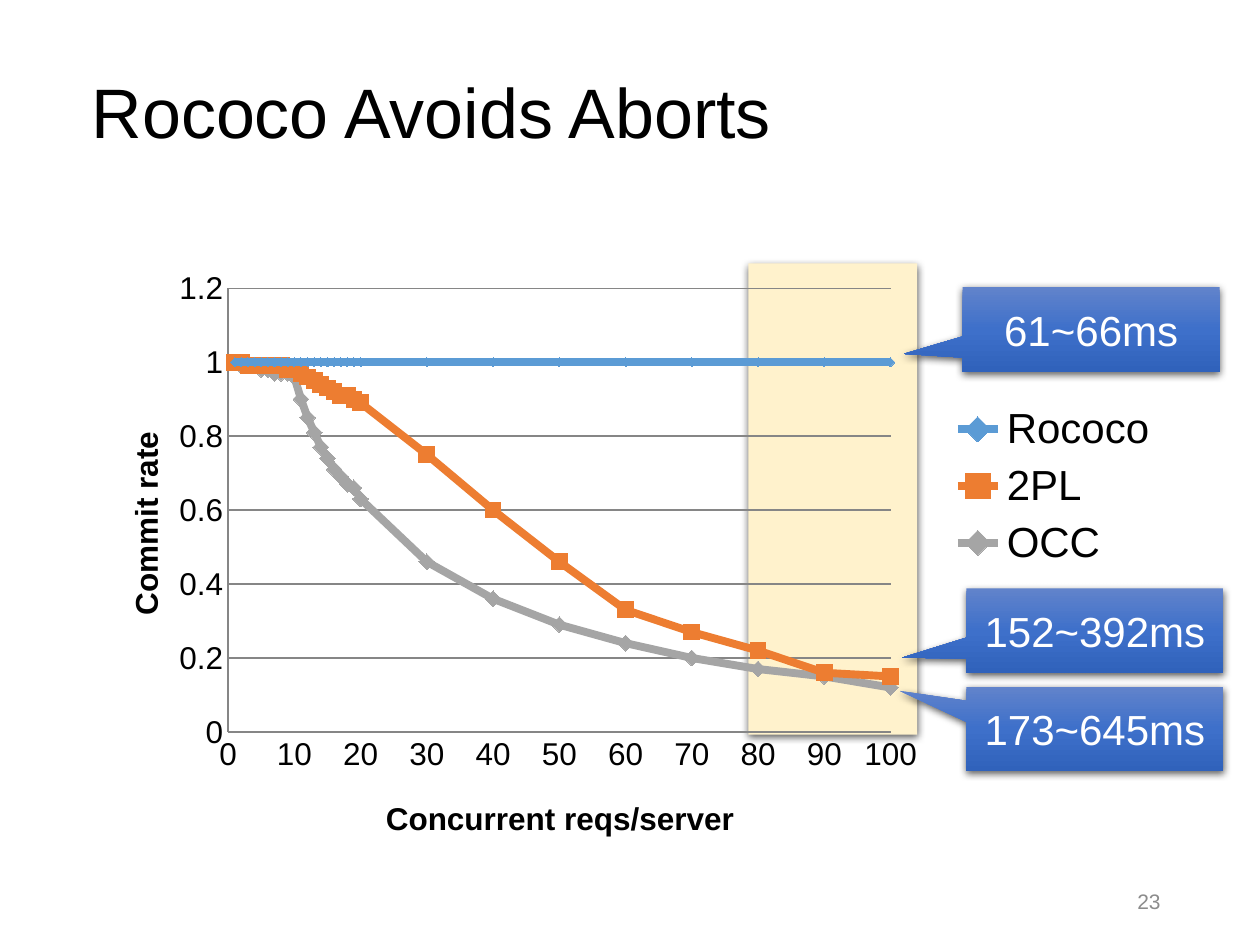
from copy import deepcopy
from dataclasses import dataclass

from lxml import etree
from pptx import Presentation
from pptx.chart.data import XyChartData
from pptx.dml.color import RGBColor
from pptx.enum.chart import XL_CHART_TYPE, XL_LEGEND_POSITION, XL_MARKER_STYLE, XL_TICK_MARK
from pptx.enum.shapes import MSO_SHAPE
from pptx.enum.text import MSO_ANCHOR, PP_ALIGN
from pptx.oxml import parse_xml
from pptx.oxml.ns import nsdecls, qn
from pptx.util import Inches, Pt

RECT, CALLOUT = MSO_SHAPE.RECTANGLE, MSO_SHAPE.RECTANGULAR_CALLOUT
LEFT, CENTER, RIGHT = PP_ALIGN.LEFT, PP_ALIGN.CENTER, PP_ALIGN.RIGHT
MIDDLE = MSO_ANCHOR.MIDDLE
DIAMOND, SQUARE = XL_MARKER_STYLE.DIAMOND, XL_MARKER_STYLE.SQUARE
NO_TICKS = XL_TICK_MARK.NONE


@dataclass(frozen=True)
class Theme:
    font: str = "Arial"
    text: str = "000000"
    inverse: str = "FFFFFF"
    muted: str = "8C8C8C"
    grid: str = "868686"
    highlight: str = "FFF2CC"
    gradient: tuple = ((0, "6183CB"), (0.5, "3E70CA"), (1, "3062BB"))
    title_size: int = 40
    large_size: int = 24
    chart_size: int = 18
    small_size: int = 12


REQUESTS = [*range(1, 21), *range(30, 101, 10)]
# name, colour, marker, marker size, commit rates
SERIES = [
    ("Rococo", "5B9BD5", DIAMOND, 5, [1] * len(REQUESTS)),
    ("2PL", "ED7D31", SQUARE, 9,
     [1, 1, 0.99, 0.99, 0.99, 0.99, 0.99, 0.99, 0.98, 0.98,
      0.97, 0.96, 0.95, 0.94, 0.93, 0.92, 0.91, 0.91, 0.9, 0.89,
      0.75, 0.6, 0.46, 0.33, 0.27, 0.22, 0.16, 0.15]),
    ("OCC", "A5A5A5", DIAMOND, 9,
     [1, 0.99, 0.99, 0.99, 0.98, 0.98, 0.97, 0.97, 0.97, 0.96,
      0.9, 0.85, 0.81, 0.77, 0.74, 0.71, 0.69, 0.67, 0.66, 0.63,
      0.46, 0.36, 0.29, 0.24, 0.2, 0.17, 0.15, 0.12]),
]
# text, left, top, pointer offset
LATENCIES = [
    ("173~645ms", 7.67, 5.45, (-0.76, -0.45)),
    ("152~392ms", 7.67, 4.67, (-0.75, 0.32)),
    ("61~66ms", 7.64, 2.28, (-0.73, 0.29)),
]


def rgb(value):
    return RGBColor.from_string(value)


def write(tf, text, *, size, color, font, bold=False, align=LEFT, spacing=None):
    p = tf.paragraphs[0]
    p.alignment = align
    if spacing:
        p.line_spacing = spacing
    r = p.add_run()
    r.text = text
    r.font.name, r.font.size, r.font.bold = font, Pt(size), bold
    r.font.color.rgb = rgb(color)


def add_shadow(sp):
    sp.shadow.inherit = False
    effects = sp._element.spPr.find(qn("a:effectLst"))
    effects.append(parse_xml(
        f'<a:outerShdw {nsdecls("a")} blurRad="{Pt(4.5)}" dist="{Pt(1.5)}" dir="5400000" '
        'rotWithShape="0"><a:srgbClr val="000000"><a:alpha val="63000"/></a:srgbClr></a:outerShdw>'))


def set_layout(parent, after=None, inner=False, **fractions):
    """Place a chart part by fractions (x, y, w, h) of the chart's frame."""
    for old in parent.findall(qn("c:layout")):
        parent.remove(old)
    layout = etree.Element(qn("c:layout"))
    manual = etree.SubElement(layout, qn("c:manualLayout"))
    if inner:
        etree.SubElement(manual, qn("c:layoutTarget"), val="inner")
    for key in "xy":
        etree.SubElement(manual, qn(f"c:{key}Mode"), val="edge")
    for key, value in fractions.items():
        etree.SubElement(manual, qn(f"c:{key}"), val=str(value))
    if after:
        parent.find(qn(after)).addnext(layout)
    else:
        parent.insert(0, layout)


class SlideBuilder:
    def __init__(self, slide, theme):
        self.s, self.theme = slide, theme

    def text(self, box, text, size, color, **fmt):
        tf = self.s.shapes.add_textbox(*map(Inches, box)).text_frame
        tf.word_wrap, tf.vertical_anchor = True, MIDDLE
        write(tf, text, size=size, color=color, font=self.theme.font, **fmt)

    def shape(self, kind, box):
        sp = self.s.shapes.add_shape(kind, *map(Inches, box))
        sp.line.fill.background()
        add_shadow(sp)
        return sp

    def highlight(self, box):
        sp = self.shape(RECT, box)
        sp.fill.solid()
        sp.fill.fore_color.rgb = rgb(self.theme.highlight)

    def callout(self, box, text, pointer):
        sp = self.shape(CALLOUT, box)
        for i, offset in enumerate(pointer):
            sp.adjustments[i] = offset
        sp.fill.gradient()
        sp.fill.gradient_angle = 270
        stops = sp._element.spPr.find(".//" + qn("a:gsLst"))
        stops.append(deepcopy(stops[-1]))
        for stop, (position, color) in zip(sp.fill.gradient_stops, self.theme.gradient):
            stop.position, stop.color.rgb = position, rgb(color)
        tf = sp.text_frame
        tf.word_wrap, tf.vertical_anchor = True, MIDDLE
        write(tf, text, size=self.theme.large_size, color=self.theme.inverse,
              font=self.theme.font, align=CENTER)

    def axis(self, axis, title, maximum, step, **place):
        th = self.theme
        axis.minimum_scale, axis.maximum_scale, axis.major_unit = 0, maximum, step
        axis.major_tick_mark = axis.minor_tick_mark = NO_TICKS
        axis.format.line.color.rgb = rgb(th.grid)
        axis.format.line.width = Pt(0.75)
        axis.tick_labels.number_format = "General"
        axis.tick_labels.number_format_is_linked = False
        write(axis.axis_title.text_frame, title, size=th.chart_size, color=th.text,
              font=th.font, bold=True, align=CENTER)
        set_layout(axis.axis_title._element, after="c:tx", **place)

    def chart(self, box):
        th = self.theme
        data = XyChartData()
        for name, *_, rates in SERIES:
            series = data.add_series(name)
            for x, y in zip(REQUESTS, rates):
                series.add_data_point(x, y)
        chart = self.s.shapes.add_chart(
            XL_CHART_TYPE.XY_SCATTER_LINES, *map(Inches, box), data).chart
        chart.has_title = False
        chart.font.name, chart.font.size = th.font, Pt(th.chart_size)
        chart.font.color.rgb = rgb(th.text)
        plot = chart.plots[0]
        plot.vary_by_categories = False
        set_layout(chart._chartSpace.chart.plotArea, inner=True, x=0.13, y=0.05, w=0.61, h=0.74)

        for series, (_, color, marker, size, _) in zip(plot.series, SERIES):
            series.smooth = False
            series.format.line.color.rgb = rgb(color)
            series.format.line.width = Pt(4.5)
            series.marker.style, series.marker.size = marker, size
            series.marker.format.fill.solid()
            series.marker.format.fill.fore_color.rgb = rgb(color)
            series.marker.format.line.fill.background()

        self.axis(chart.category_axis, "Concurrent reqs/server", 100, 10, x=0.27, y=0.89)
        self.axis(chart.value_axis, "Commit rate", 1.2, 0.2, x=0.03, y=0.28)
        chart.category_axis.has_major_gridlines = False
        grid = chart.value_axis.major_gridlines.format.line
        grid.color.rgb, grid.width = rgb(th.grid), Pt(0.75)

        chart.has_legend = True
        legend = chart.legend
        legend.position, legend.include_in_layout = XL_LEGEND_POSITION.RIGHT, False
        legend.font.name, legend.font.size = th.font, Pt(th.large_size)
        legend.font.color.rgb = rgb(th.text)
        set_layout(legend._element, after="c:legendPos", x=0.79, y=0.23, w=0.2, h=0.3)


def main():
    prs = Presentation()
    prs.slide_width, prs.slide_height = Inches(10), Inches(7.5)
    theme = Theme()
    page = SlideBuilder(prs.slides.add_slide(prs.slide_layouts[6]), theme)
    page.highlight((5.94, 2.09, 1.34, 3.74))
    page.text((0.63, 0.19, 8.62, 1.45), "Rococo Avoids Aborts",
              theme.title_size, theme.text, spacing=0.9)
    page.chart((0.69, 2.05, 8.62, 4.76))
    for text, left, top, pointer in LATENCIES:
        page.callout((left, top, 2.04, 0.67), text, pointer)
    page.text((7.06, 6.95, 2.25, 0.4), "23", theme.small_size, theme.muted, align=RIGHT)
    prs.save("out.pptx")


if __name__ == "__main__":
    main()
